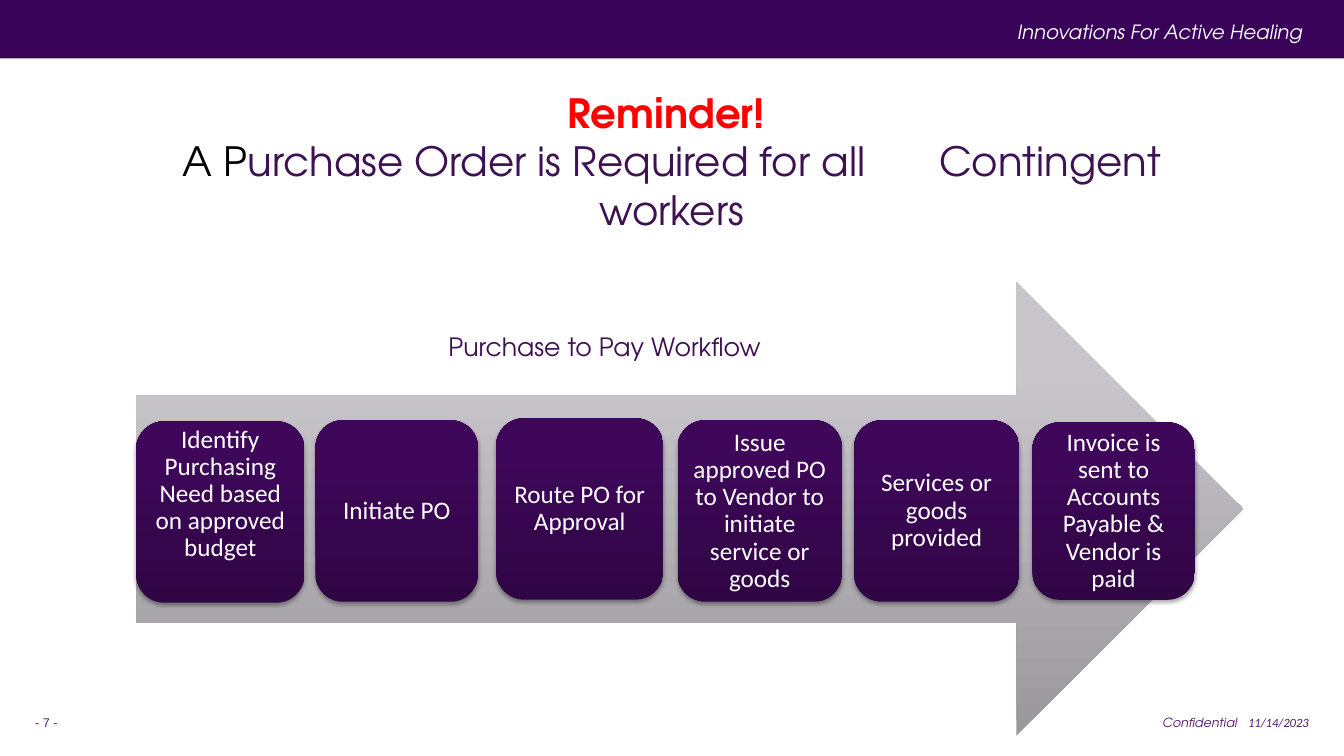
"""Build the purchase-to-pay reminder slide."""
from pptx import Presentation
from pptx.dml.color import RGBColor
from pptx.enum.shapes import MSO_SHAPE
from pptx.enum.text import MSO_ANCHOR, PP_ALIGN
from pptx.oxml import parse_xml
from pptx.oxml.ns import nsdecls
from pptx.util import Inches, Pt

WIDE, HIGH = Inches(13.33), Inches(7.5)
HUES = {"bar": "380359", "foot": "561874", "ink": "3D1152", "white": "FFFFFF",
        "red": "FF0000", "black": "000000"}
ARROW = {0: "9A989C", 80: "C8C5CB", 100: "C9C6CC"}
STEP = {0: "300544", 80: "3E0759", 100: "3F055B"}
GEO, SANS, PLAIN = "TeX Gyre Adventor", "Calibri", "Arial"

# Areas are left, top, width and height in percent of the slide.
BAR = (0, 0, 100, 7.73)
BODY = (10.13, 37.33, 82.37, 60)
STEPS = [
    ("Identify Purchasing Need based on approved budget", (10.13, 55.73, 12.53, 24), 0.42),
    ("Initiate PO", (23.48, 55.6, 12.08, 24), 0.07),
    ("Route PO for Approval", (36.91, 55.33, 12.45, 24), 0.07),
    ("Issue approved PO to Vendor to initiate service or goods", (50.41, 55.6, 12.23, 24), 0.07),
    ("Services or goods provided", (63.54, 55.6, 12.3, 24), 0.07),
    ("Invoice is sent to Accounts Payable & Vendor is paid", (76.82, 55.87, 12.08, 23.47), 0.07),
]
FOOT = {"size": Pt(9), "hue": "foot"}
HEAD = {"name": GEO, "size": Pt(28.8)}
MID, TOP = MSO_ANCHOR.MIDDLE, MSO_ANCHOR.TOP
LEFT, RIGHT, CENTER = PP_ALIGN.LEFT, PP_ALIGN.RIGHT, PP_ALIGN.CENTER
TEXTS = [
    ((92.12, 92.93, 7.28, 5.33), MID, LEFT, True,
     [("11/14/2023", {**FOOT, "name": SANS, "italic": True})]),
    ((85.75, 93.87, 7.13, 3.33), TOP, LEFT, False,
     [("Confidential", {**FOOT, "name": GEO, "italic": True})]),
    ((56.86, 2, 40.81, 4.53), TOP, RIGHT, True,
     [("Innovations For Active Healing",
       {"name": GEO, "size": Pt(14), "hue": "white", "italic": True})]),
    ((1.88, 92.93, 5.85, 5.33), MID, LEFT, True, [("- 7 -", {**FOOT, "name": PLAIN})]),
    ((11.33, 12.93, 77.34, 16.67), MID, CENTER, True,
     [("Reminder! \n", {**HEAD, "hue": "red", "bold": True}),
      ("A P", {**HEAD, "hue": "black"}),
      ("urchase Order is Required for all \t\tContingent workers", {**HEAD, "hue": "ink"})]),
    ((32.63, 43.2, 28.21, 5.33), TOP, LEFT, True,
     [("Purchase to Pay Workflow", {"name": GEO, "size": Pt(18), "hue": "ink"})]),
]


def place(area):
    return [round(part * side / 100) for part, side in zip(area, (WIDE, HIGH) * 2)]


def write(shape, runs, align, **form):
    frame = shape.text_frame
    for key, val in form.items():
        setattr(frame, key, val)
    para = frame.paragraphs[0]
    para.alignment = align
    for text, style in runs:
        run = para.add_run()
        run.text = text.rstrip("\n")
        for key, val in style.items():
            if key == "hue":
                run.font.color.rgb = RGBColor.from_string(HUES[val])
            else:
                setattr(run.font, key, val)
        if text.endswith("\n"):
            para.add_line_break()
    return para


def draw(slide, kind, area):
    shape = slide.shapes.add_shape(kind, *place(area))
    shape.shadow.inherit = False
    shape.line.fill.background()
    return shape


def blend(shape, stops):
    marks = "".join(f'<a:gs pos="{pos * 1000}"><a:srgbClr val="{hue}"/></a:gs>'
                    for pos, hue in stops.items())
    fill = parse_xml(f'<a:gradFill {nsdecls("a")} rotWithShape="1"><a:gsLst>{marks}</a:gsLst>'
                     '<a:lin ang="16200000" scaled="0"/></a:gradFill>')
    shape.element.spPr.insert(2, fill)


def shade(shape):
    glow = parse_xml(f'<a:outerShdw {nsdecls("a")} blurRad="{Pt(3.1)}" dist="{Pt(1.8)}" '
                     'dir="5400000" rotWithShape="0"><a:srgbClr val="000000">'
                     '<a:alpha val="35000"/></a:srgbClr></a:outerShdw>')
    shape.element.spPr[-1].append(glow)


def main():
    deck = Presentation()
    deck.slide_width, deck.slide_height = WIDE, HIGH
    slide = deck.slides.add_slide(deck.slide_layouts[6])

    bar = draw(slide, MSO_SHAPE.RECTANGLE, BAR)
    bar.fill.solid()
    bar.fill.fore_color.rgb = RGBColor.from_string(HUES["bar"])
    blend(draw(slide, MSO_SHAPE.RIGHT_ARROW, BODY), ARROW)

    pad = Inches(0.07)
    for text, area, base in STEPS:
        card = draw(slide, MSO_SHAPE.ROUNDED_RECTANGLE, area)
        blend(card, STEP)
        shade(card)
        style = {"name": SANS, "size": Pt(18), "hue": "white"}
        para = write(card, [(text, style)], CENTER, word_wrap=True, vertical_anchor=MID,
                     margin_left=pad, margin_right=pad, margin_top=pad,
                     margin_bottom=Inches(base))
        para.line_spacing = 0.9

    for area, anchor, align, wrap, runs in TEXTS:
        box = slide.shapes.add_textbox(*place(area))
        write(box, runs, align, word_wrap=wrap, vertical_anchor=anchor)

    deck.save("out.pptx")


if __name__ == "__main__":
    main()
